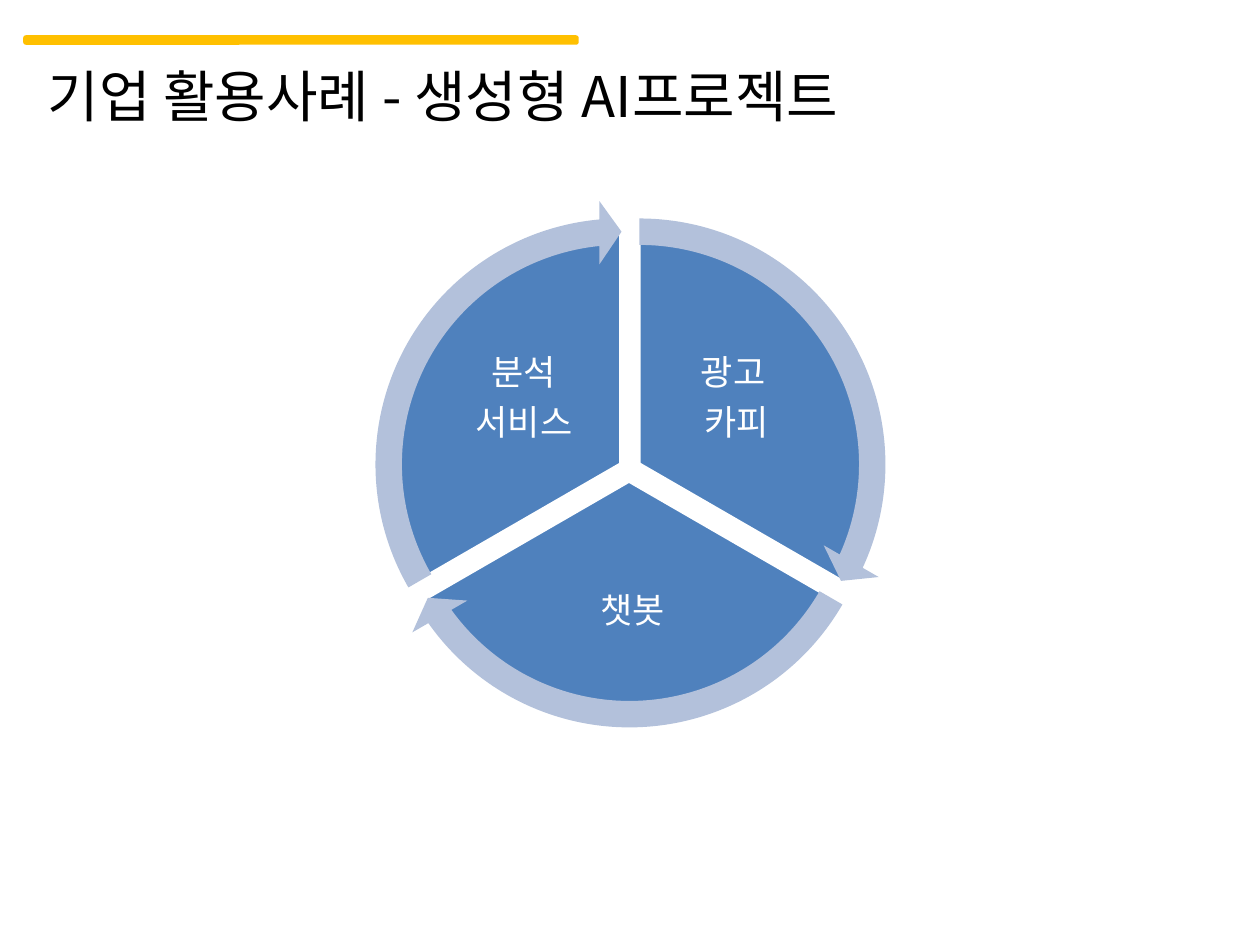
from lxml import etree
from pptx import Presentation
from pptx.dml.color import RGBColor
from pptx.enum.shapes import MSO_SHAPE
from pptx.enum.text import MSO_ANCHOR, MSO_AUTO_SIZE, PP_ALIGN
from pptx.oxml.ns import qn
from pptx.util import Emu, Pt

BAR = MSO_SHAPE.ROUNDED_RECTANGLE
PIE = MSO_SHAPE.PIE
ARROW = MSO_SHAPE.CIRCULAR_ARROW
MIDDLE, TOP = MSO_ANCHOR.MIDDLE, MSO_ANCHOR.TOP
LEFT, CENTER = PP_ALIGN.LEFT, PP_ALIGN.CENTER
NO_FIT = MSO_AUTO_SIZE.NONE

FONT = "Noto Sans CJK KR"
COLORS = {"bar": "FFC000", "slice": "4F81BD", "arrow": "B3C1DB",
          "white": "FFFFFF", "black": "000000"}


def px(*lengths):
    return [Emu(round(length * 914400 / 126)) for length in lengths]


def format_text(frame, size, color, align, anchor):
    frame.word_wrap = True
    frame.auto_size = NO_FIT
    frame.vertical_anchor = anchor
    for para in frame.paragraphs:
        para.alignment = align
        for span in para.runs:
            span.font.size = Pt(size)
            span.font.name = FONT
            span.font.color.rgb = RGBColor.from_string(COLORS[color])
            east_asian = etree.SubElement(span.font._element, qn("a:ea"))
            east_asian.set("typeface", FONT)


deck = Presentation()
deck.slide_width, deck.slide_height = px(1260, 945)
page = deck.slides.add_slide(deck.slide_layouts[5])

bar = page.shapes.add_shape(BAR, *px(25, 37, 552, 6))
bar.shadow.inherit = False
bar.fill.solid()
bar.fill.fore_color.rgb = RGBColor.from_string(COLORS["bar"])
bar.line.color.rgb = RGBColor.from_string(COLORS["bar"])
bar.line.width = Pt(2)

title = page.shapes.title
title.left, title.top, title.width, title.height = px(35, 55, 1071, 81)
title.text_frame.text = "기업 활용사례 - 생성형 AI프로젝트"
format_text(title.text_frame, 32, "black", LEFT, TOP)

PIE_SIZE, ARROW_SIZE = 470, 529
RING = (ARROW_SIZE - PIE_SIZE) // 2
SLICES = [
    ("광고 \n카피", (404, 229), (162, 18), (653, 329, 168, 140), (14.73, 161.99)),
    ("챗봇", (394, 246), (18, 90), (507, 551, 252, 123), (86.72, 18.01)),
    ("분석\n서비스", (386, 229), (90, 162), (440, 329, 168, 140), (158.73, 90)),
]

cycle = page.shapes.add_group_shape()
for label, (left, top), angles, label_area, arrow_angles in SLICES:
    wedge = cycle.shapes.add_shape(PIE, *px(left, top, PIE_SIZE, PIE_SIZE))
    wedge.shadow.inherit = False
    wedge.adjustments[0], wedge.adjustments[1] = angles
    wedge.fill.solid()
    wedge.fill.fore_color.rgb = RGBColor.from_string(COLORS["slice"])
    wedge.line.color.rgb = RGBColor.from_string(COLORS["white"])
    wedge.line.width = Pt(2)

    box = cycle.shapes.add_textbox(*px(*label_area))
    frame = box.text_frame
    frame.text = label
    frame.margin_left, frame.margin_top, frame.margin_right, frame.margin_bottom = px(4, 4, 4, 4)
    format_text(frame, 20, "white", CENTER, MIDDLE)
    for para in frame.paragraphs:
        para.line_spacing = 0.9
        para.space_after = Pt(7)

for label, (left, top), angles, label_area, (end, start) in SLICES:
    arrow = cycle.shapes.add_shape(ARROW, *px(left - RING, top - RING, ARROW_SIZE, ARROW_SIZE))
    arrow.shadow.inherit = False
    for index, value in enumerate((0.05, 3.28, end, start, 0.06)):
        arrow.adjustments[index] = value
    arrow.fill.solid()
    arrow.fill.fore_color.rgb = RGBColor.from_string(COLORS["arrow"])
    arrow.line.fill.background()

deck.save("out.pptx")
